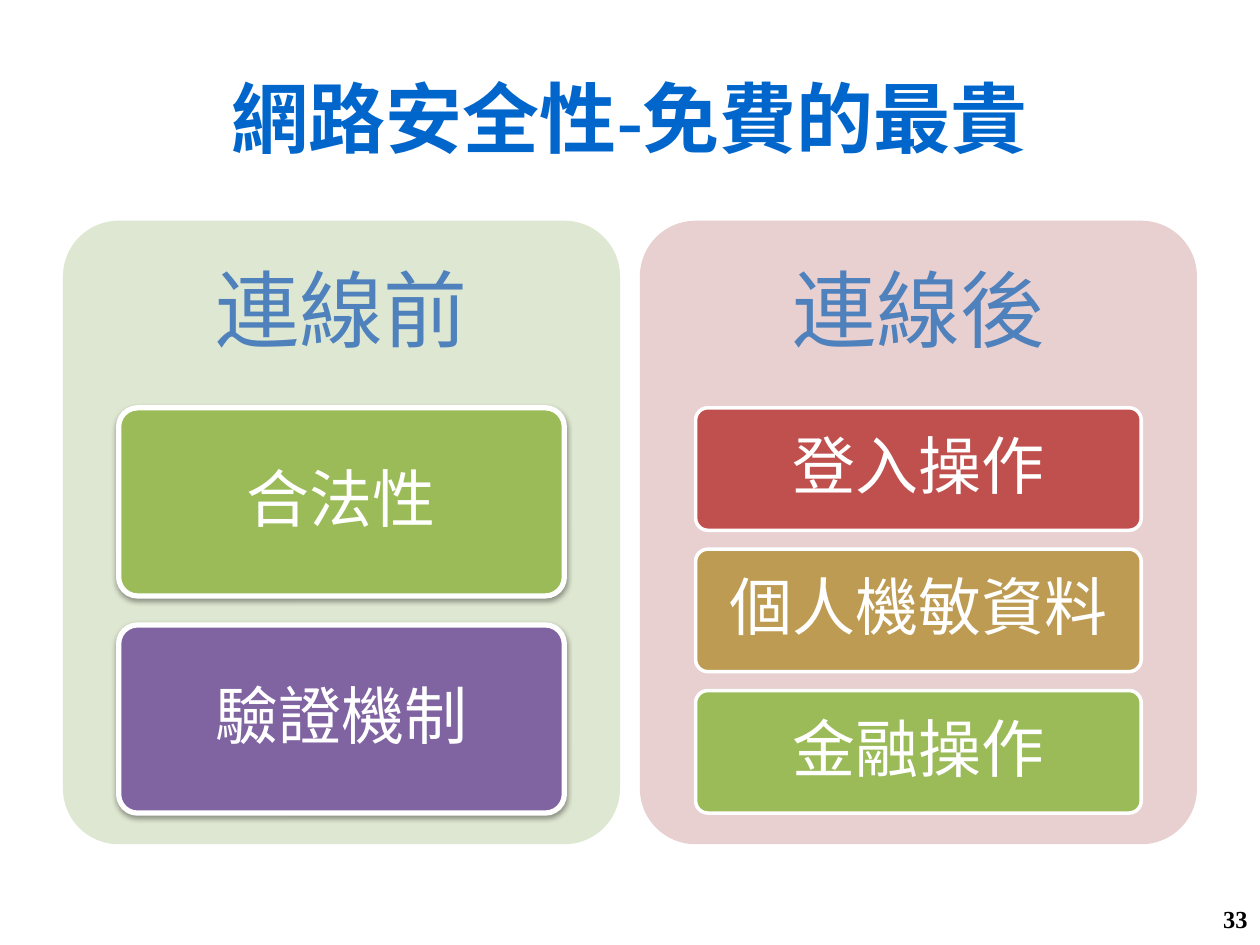
from lxml import etree
from pptx import Presentation
from pptx.dml.color import RGBColor
from pptx.enum import shapes, text
from pptx.oxml import parse_xml
from pptx.util import Cm, Pt

FONT = "Times New Roman"
NS = "http://schemas.openxmlformats.org/drawingml/2006/main"
CARD_GAP = 2 / 13  # share of a card's height


def color(hex_code):
    return RGBColor.from_string(hex_code)


def write(shape, words, size, hex_code, align=text.PP_ALIGN.CENTER, bold=False,
          spacing=None, insets=(0.25, 0.13)):
    frame = shape.text_frame
    frame.word_wrap = True
    frame.vertical_anchor = text.MSO_ANCHOR.MIDDLE
    frame.margin_left = frame.margin_right = Cm(insets[0])
    frame.margin_top = frame.margin_bottom = Cm(insets[1])
    para = frame.paragraphs[0]
    para.text = words
    para.alignment = align
    para.line_spacing = spacing
    para.font.name = FONT
    para.font.size = Pt(size)
    para.font.bold = bold
    para.font.color.rgb = color(hex_code)


def add_text(page, box, words, size, hex_code, **style):
    shape = page.shapes.add_textbox(*(Cm(length) for length in box))
    write(shape, words, size, hex_code, **style)


def add_rounded(page, box, fill):
    shape = page.shapes.add_shape(shapes.MSO_SHAPE.ROUNDED_RECTANGLE,
                                  *(Cm(length) for length in box))
    shape.adjustments[0] = 0.1
    shape.shadow.inherit = False
    shape.fill.solid()
    shape.fill.fore_color.rgb = color(fill)
    shape.line.fill.background()
    return shape


def add_shadow(shape):
    effects = shape._element.spPr.find(f"{{{NS}}}effectLst")
    effects.append(parse_xml(
        f'<a:outerShdw xmlns:a="{NS}" blurRad="40000" dist="20000" dir="5400000" '
        'rotWithShape="0"><a:srgbClr val="000000"><a:alpha val="38000"/></a:srgbClr>'
        '</a:outerShdw>'))


def add_panel(page, box, heading, fill, cards, border, shadow):
    """A tinted panel: heading in the top 30%, cards in the next 65%."""
    left, top, width, height = box
    add_rounded(page, box, fill)
    add_text(page, (left, top, width, 0.3 * height), heading, 48, "4F81BD",
             spacing=0.9, insets=(0.5, 0.5))

    # Equal cards, with gaps in proportion to their height
    count = len(cards)
    card_height = 0.65 * height / (count + (count - 1) * CARD_GAP)
    for index, (words, card_fill) in enumerate(cards):
        card_top = top + 0.3 * height + index * card_height * (1 + CARD_GAP)
        card = add_rounded(page, (left + 0.1 * width, card_top,
                                  0.8 * width, card_height), card_fill)
        card.line.color.rgb = color("FFFFFF")
        card.line.width = Pt(border)
        if shadow:
            add_shadow(card)
        write(card, words, 36, "FFFFFF", spacing=0.9, insets=(0.25, 0.18))


def main():
    deck = Presentation()
    deck.slide_width, deck.slide_height = Cm(25.4), Cm(19.05)
    page = deck.slides.add_slide(deck.slide_layouts[6])

    # Title
    add_text(page, (1.27, 0.76, 22.86, 3.18), "網路安全性-免費的最貴", 44, "0066CC",
             bold=True)

    # Before and after connecting
    add_panel(page, (1.27, 4.45, 11.23, 12.57), "連線前", "DEE7D1",
              [("合法性", "9BBB59"), ("驗證機制", "8064A2")], border=3, shadow=True)
    add_panel(page, (12.9, 4.45, 11.23, 12.57), "連線後", "E8D0D0",
              [("登入操作", "C0504D"), ("個人機敏資料", "BD9B53"),
               ("金融操作", "9BBB59")], border=2, shadow=False)

    # Page number
    add_text(page, (19.48, 18.01, 5.92, 1.02), "33", 14, "000000",
             align=text.PP_ALIGN.RIGHT, bold=True)

    deck.save("out.pptx")


if __name__ == "__main__":
    main()
